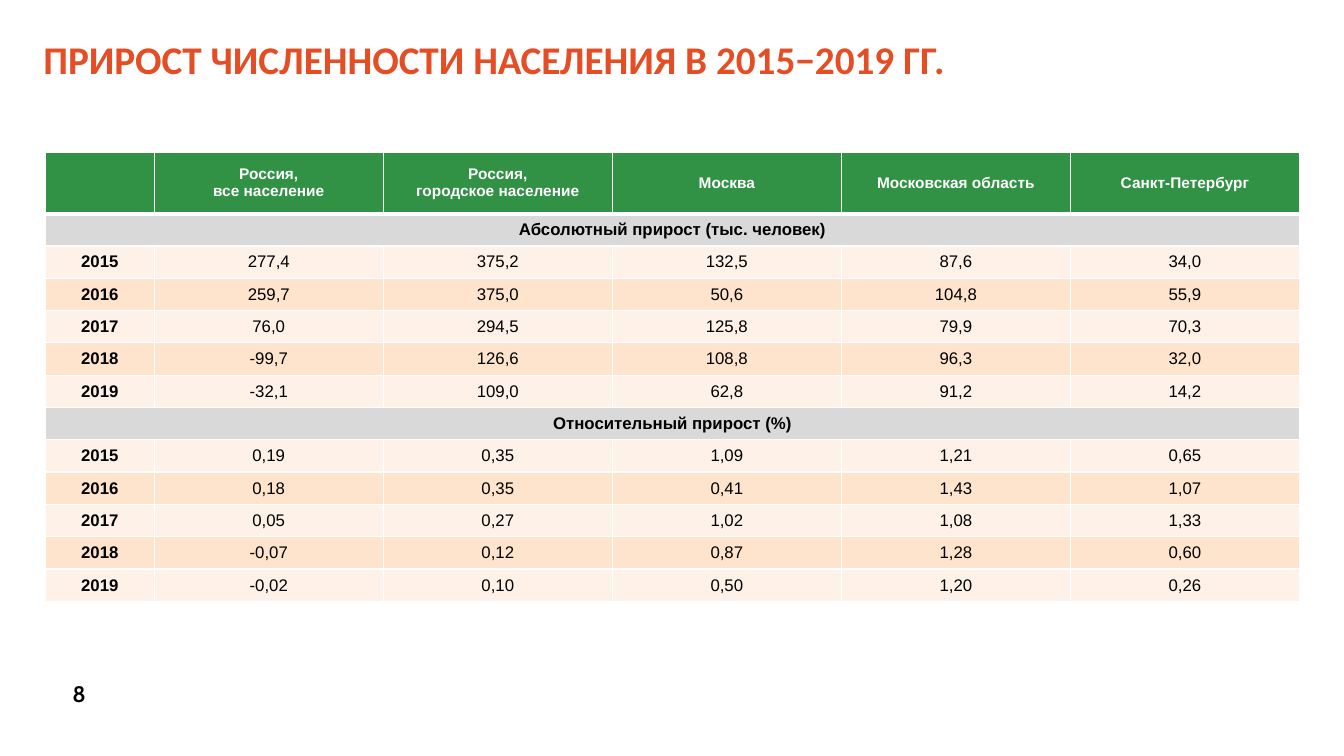
"""Build the slide on population growth in 2015−2019."""
from lxml.etree import SubElement
from pptx import Presentation
from pptx.dml.color import RGBColor
from pptx.enum.text import MSO_ANCHOR, PP_ALIGN
from pptx.oxml.ns import qn
from pptx.util import Inches, Pt

TITLE = "ПРИРОСТ ЧИСЛЕННОСТИ НАСЕЛЕНИЯ В 2015−2019 ГГ."
NUMBER = "8"
HEADS = ["", "Россия,\vвсе население", "Россия,\vгородское население",
         "Москва", "Московская область", "Санкт-Петербург"]
GROUPS = {
    "Абсолютный прирост (тыс. человек)": [
        ("2015", "277,4", "375,2", "132,5", "87,6", "34,0"),
        ("2016", "259,7", "375,0", "50,6", "104,8", "55,9"),
        ("2017", "76,0", "294,5", "125,8", "79,9", "70,3"),
        ("2018", "-99,7", "126,6", "108,8", "96,3", "32,0"),
        ("2019", "-32,1", "109,0", "62,8", "91,2", "14,2"),
    ],
    "Относительный прирост (%)": [
        ("2015", "0,19", "0,35", "1,09", "1,21", "0,65"),
        ("2016", "0,18", "0,35", "0,41", "1,43", "1,07"),
        ("2017", "0,05", "0,27", "1,02", "1,08", "1,33"),
        ("2018", "-0,07", "0,12", "0,87", "1,28", "0,60"),
        ("2019", "-0,02", "0,10", "0,50", "1,20", "0,26"),
    ],
}
COLORS = {"title": "E54D25", "head": "319144", "group": "D9D9D9", "pale": "FEF2E8",
          "peach": "FEE4CD", "white": "FFFFFF", "black": "000000"}
LEFT, TOP, WIDTH, HEIGHT = 0.45, 1.51, 12.44, 4.46
YEAR_W, HEAD_H = 1.08, 0.61


def rgb(name):
    """Return a palette colour."""
    return RGBColor.from_string(COLORS[name])


def style(par, size, face, color, bold=True, align=PP_ALIGN.CENTER):
    """Format one paragraph."""
    par.alignment = align
    font = par.font
    font.size, font.name, font.bold = Pt(size), face, bold
    font.color.rgb = rgb(color)


def border(cell, top, bottom):
    """Draw white lines around a cell, widths in points."""
    props = cell._tc.get_or_add_tcPr()
    for side, width in (("L", 1), ("R", 1), ("T", top), ("B", bottom)):
        line = SubElement(props, qn(f"a:ln{side}"), w=str(Pt(width)))
        fill = SubElement(line, qn("a:solidFill"))
        SubElement(fill, qn("a:srgbClr"), val=COLORS["white"])


def add_title(slide):
    """Place the slide title."""
    title = slide.shapes.title
    title.left, title.top = Inches(0.33), Inches(0.3)
    title.width, title.height = Inches(10.92), Inches(0.57)
    frame = title.text_frame
    frame.text = TITLE
    frame.vertical_anchor = MSO_ANCHOR.MIDDLE
    style(frame.paragraphs[0], 28, "Calibri", "title", align=PP_ALIGN.LEFT)


def add_number(slide):
    """Place the page number."""
    box = slide.shapes.add_textbox(Inches(0.51), Inches(6.7), Inches(0.55), Inches(0.37))
    box.text_frame.word_wrap = True
    box.text_frame.text = NUMBER
    style(box.text_frame.paragraphs[0], 16, "Cabin", "black")


def add_growth(slide):
    """Build the table of growth by year and region."""
    rows = [("head", HEADS)]
    for name, years in GROUPS.items():
        rows.append(("group", [name] + [""] * (len(HEADS) - 1)))
        rows += [(("pale", "peach")[i % 2], year) for i, year in enumerate(years)]
    table = slide.shapes.add_table(len(rows), len(HEADS), Inches(LEFT), Inches(TOP),
                                   Inches(WIDTH), Inches(HEIGHT)).table
    for c, column in enumerate(table.columns):
        column.width = Inches((WIDTH - YEAR_W) / (len(HEADS) - 1) if c else YEAR_W)
    for r, (kind, texts) in enumerate(rows):
        head = kind == "head"
        table.rows[r].height = Inches(HEAD_H if head else (HEIGHT - HEAD_H) / (len(rows) - 1))
        for c, text in enumerate(texts):
            cell = table.cell(r, c)
            border(cell, 3 if r == 1 else 1, 3 if head else 1)
            cell.fill.solid()
            cell.fill.fore_color.rgb = rgb(kind)
            cell.vertical_anchor = MSO_ANCHOR.MIDDLE
            cell.margin_left = cell.margin_right = Inches(0.07)
            cell.margin_top = cell.margin_bottom = 0
            cell.text_frame.text = text
            style(cell.text_frame.paragraphs[0], 11 if head else 12, "Arial",
                  "white" if head else "black", bold=c == 0 or head)
        if kind == "group":
            table.cell(r, 0).merge(table.cell(r, len(HEADS) - 1))


def main():
    """Make and save the deck."""
    deck = Presentation()
    deck.slide_width, deck.slide_height = Inches(13.33), Inches(7.5)
    slide = deck.slides.add_slide(deck.slide_layouts[5])
    add_number(slide)
    add_title(slide)
    add_growth(slide)
    deck.save("out.pptx")


if __name__ == "__main__":
    main()
